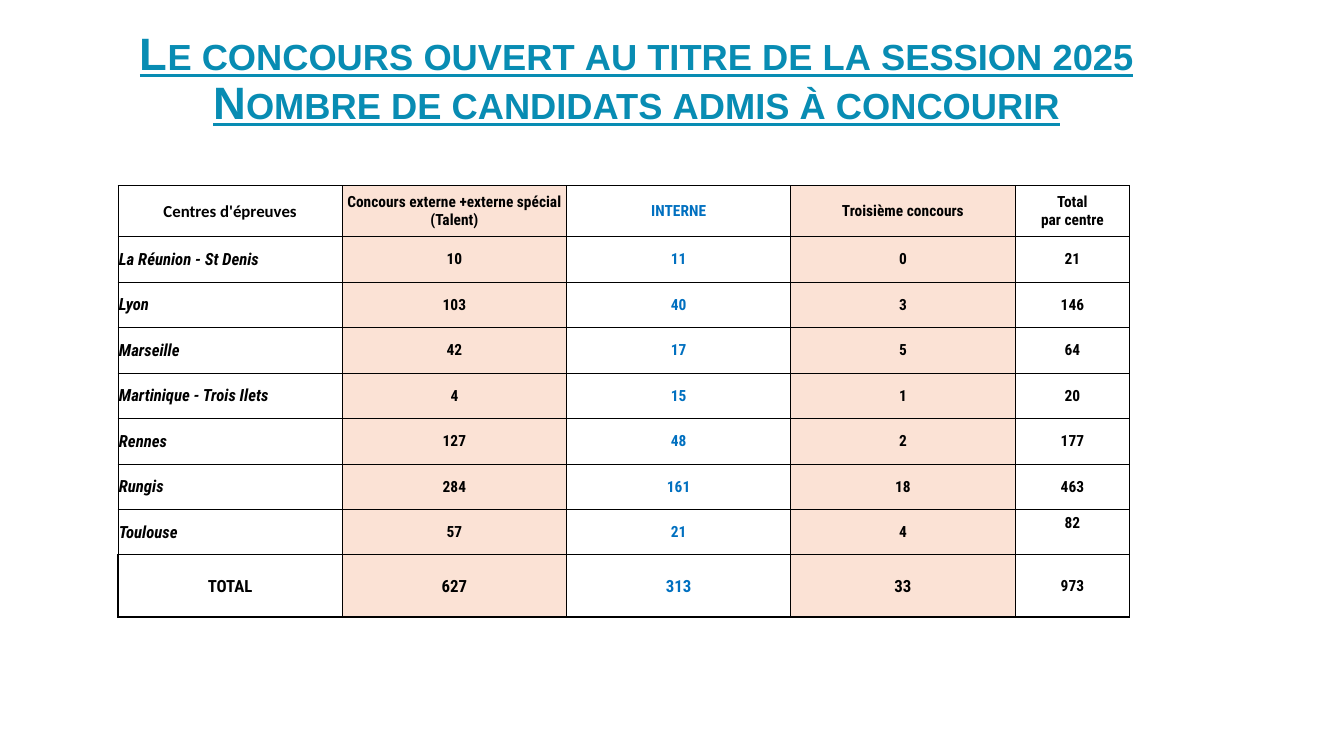
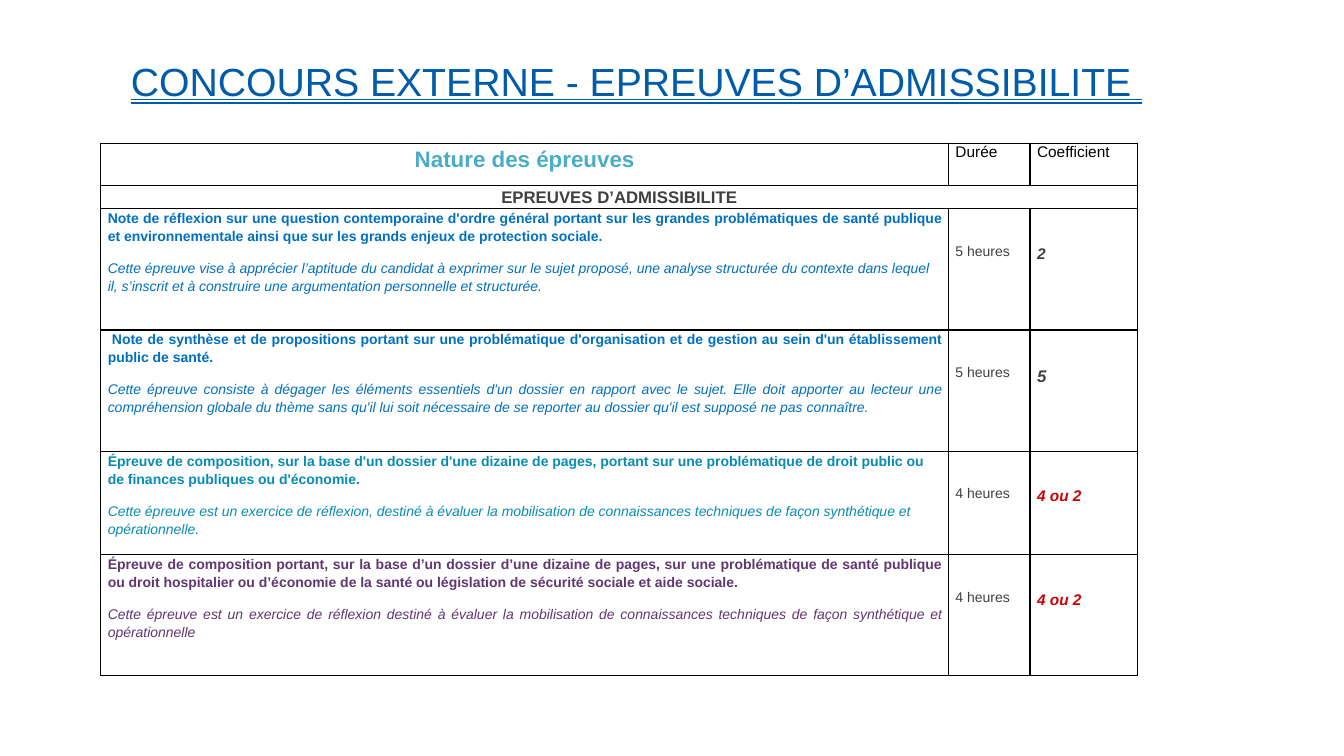
from lxml import etree
from pptx import Presentation
from pptx.dml.color import RGBColor
from pptx.enum.text import MSO_ANCHOR as Anchor, MSO_UNDERLINE as Underline, PP_ALIGN as Align
from pptx.oxml.ns import qn
from pptx.util import Pt

# Content
COLORS = {
    "black": "000000", "gray": "404040", "teal": "088CB3", "navy": "005CA9",
    "blue": "0070C0", "sky": "4BACC6", "purple": "613771", "red": "CC0000",
    "peach": "FBE2D5",
}
CANDIDATES_TITLE = ("Le concours ouvert au titre de la session 2025\n"
                    "Nombre de candidats admis à concourir")
CANDIDATES = [
    ("Centres d'épreuves", "Concours externe +externe spécial (Talent)", "INTERNE",
     "Troisième concours", "Total\npar centre"),
    ("La Réunion - St Denis", "10", "11", "0", "21"),
    ("Lyon", "103", "40", "3", "146"),
    ("Marseille", "42", "17", "5", "64"),
    ("Martinique - Trois Ilets", "4", "15", "1", "20"),
    ("Rennes", "127", "48", "2", "177"),
    ("Rungis", "284", "161", "18", "463"),
    ("Toulouse", "57", "21", "4", "82"),
    ("TOTAL", "627", "313", "33", "973"),
]
EXAMS_TITLE = "CONCOURS EXTERNE - EPREUVES D’ADMISSIBILITE "
EXAM_HEADERS = ("Nature des épreuves", "Durée", "Coefficient")
EXAM_SECTION = "EPREUVES D’ADMISSIBILITE"
EXAMS = [
    {"name": "Note de réflexion sur une question contemporaine d'ordre général portant sur "
             "les grandes problématiques de santé publique et environnementale ainsi que sur "
             "les grands enjeux de protection sociale.",
     "aim": "Cette épreuve vise à apprécier l’aptitude du candidat à exprimer sur le sujet "
            "proposé, une analyse structurée du contexte dans lequel il, s’inscrit et à "
            "construire une argumentation personnelle et structurée.",
     "color": "blue", "aligns": (Align.JUSTIFY, Align.LEFT), "indent": 0,
     "duration": "5 heures", "weight": "2", "weight_size": 11, "weight_color": "gray"},
    {"name": "Note de synthèse et de propositions portant sur une problématique "
             "d'organisation et de gestion au sein d'un établissement public de santé.",
     "aim": "Cette épreuve consiste à dégager les éléments essentiels d'un dossier en rapport "
            "avec le sujet. Elle doit apporter au lecteur une compréhension globale du thème "
            "sans qu'il lui soit nécessaire de se reporter au dossier qu'il est supposé ne "
            "pas connaître.",
     "color": "blue", "aligns": (Align.JUSTIFY, Align.JUSTIFY), "indent": 3,
     "duration": "5 heures", "weight": "5", "weight_size": 12, "weight_color": "gray"},
    {"name": "Épreuve de composition, sur la base d'un dossier d'une dizaine de pages, "
             "portant sur une problématique de droit public ou de finances publiques ou "
             "d'économie.",
     "aim": "Cette épreuve est un exercice de réflexion, destiné à évaluer la mobilisation de "
            "connaissances techniques de façon synthétique et opérationnelle.",
     "color": "teal", "aligns": (Align.LEFT, Align.LEFT), "indent": 0,
     "duration": "4 heures", "weight": "4 ou 2", "weight_size": 11, "weight_color": "red"},
    {"name": "Épreuve de composition portant, sur la base d’un dossier d’une dizaine de "
             "pages, sur une problématique de santé publique ou droit hospitalier ou "
             "d’économie de la santé ou législation de sécurité sociale et aide sociale.",
     "aim": "Cette épreuve est un exercice de réflexion destiné à évaluer la mobilisation de "
            "connaissances techniques de façon synthétique et opérationnelle",
     "color": "purple", "aligns": (Align.JUSTIFY, Align.JUSTIFY), "indent": 0,
     "duration": "4 heures", "weight": "4 ou 2", "weight_size": 11, "weight_color": "red"},
]

# Shared formats
SPACED = {"line_spacing": 1.15, "space_after": Pt(10)}
EXAM_MARGINS = (5, 0, 5, 0)
CENTER_MARGINS = (0.7, 0.7, 0.7, 0)


def write(para, text, color="black", size=11, layout=None, **font):
    para.text = text
    for key, value in (layout or {}).items():
        setattr(para, key, value)
    for span in para.runs:
        span.font.color.rgb = RGBColor.from_string(COLORS[color])
        for key, value in {"name": "Arial", "size": Pt(size), **font}.items():
            setattr(span.font, key, value)


def add_title(page, text, top, height, **style):
    box = page.shapes.add_textbox(Pt(40.3), Pt(top), Pt(828.7), Pt(height))
    frame = box.text_frame
    frame.word_wrap = True
    frame.vertical_anchor = Anchor.MIDDLE
    para = frame.paragraphs[0]
    write(para, text, layout={"alignment": Align.CENTER, "line_spacing": 0.9}, **style)
    return para


def add_grid(page, left, top, widths, heights):
    table = page.shapes.add_table(len(heights), len(widths), Pt(left), Pt(top),
                                  Pt(sum(widths)), Pt(sum(heights))).table
    table.first_row = table.horz_banding = False
    for column, width in zip(table.columns, widths):
        column.width = Pt(width)
    for row, height in zip(table.rows, heights):
        row.height = Pt(height)
    return table


def style_cell(cell, margins, borders, fill=None, anchor=Anchor.TOP):
    """Margins and borders follow the order left, top, right, bottom."""
    for side, margin in zip(("left", "top", "right", "bottom"), margins):
        setattr(cell, f"margin_{side}", Pt(margin))
    cell.vertical_anchor = anchor
    properties = cell._tc.get_or_add_tcPr()
    left, top, right, bottom = borders
    for tag, width in (("lnL", left), ("lnR", right), ("lnT", top), ("lnB", bottom)):
        line = etree.SubElement(properties, qn(f"a:{tag}"), w=str(Pt(width)))
        solid = etree.SubElement(line, qn("a:solidFill"))
        etree.SubElement(solid, qn("a:srgbClr"), val=COLORS["black"])
    if fill:
        cell.fill.solid()
        cell.fill.fore_color.rgb = RGBColor.from_string(COLORS[fill])
    else:
        cell.fill.background()


def candidates_slide(page):
    title = add_title(page, CANDIDATES_TITLE, 15.8, 83.5,
                      color="teal", size=32.4, bold=True, underline=True)
    for span in title.runs:
        span.font._element.set("cap", "small")

    last_row, last_column = len(CANDIDATES) - 1, len(CANDIDATES[0]) - 1
    table = add_grid(page, 84.3, 132.7, [160.2] * last_column + [82],
                     [36.2] + [32.5] * (last_row - 1) + [44.5])
    for r, values in enumerate(CANDIDATES):
        for c, text in enumerate(values):
            cell = table.cell(r, c)
            is_center = c == 0 and 0 < r < last_row
            in_total = c == last_column
            # Heavier rules frame the totals
            borders = (1 if r == last_row and c == 0 else 0.5,
                       1 if (r == last_row and not in_total) or (r == 0 and in_total) else 0.5,
                       1 if in_total else 0.5,
                       1 if r == last_row or (r == last_row - 1 and not in_total) else 0.5)
            style_cell(cell, CENTER_MARGINS, borders,
                       "peach" if c in (1, 3) else None, Anchor.MIDDLE)
            write(cell.text_frame.paragraphs[0], text,
                  color="blue" if c == 2 else "black",
                  size=12 if c == 0 or (r == last_row and not in_total) else 11,
                  layout={"alignment": Align.JUSTIFY if is_center else Align.CENTER},
                  name="Calibri" if r == c == 0 else "Roboto Condensed",
                  bold=True, italic=is_center)
    # The last centre's total sits above the middle of its cell
    table.cell(last_row - 1, last_column).margin_bottom = Pt(13)


def exams_slide(page):
    add_title(page, EXAMS_TITLE, 33.1, 53.3, color="navy", size=28,
              underline=Underline.DOUBLE_LINE)
    table = add_grid(page, 72, 102.3, [605.5, 58.3, 77],
                     [30.2, 16.2, 86.6, 86.6, 73.9, 86.6])
    for cell in table.iter_cells():
        style_cell(cell, EXAM_MARGINS, (1, 1, 1, 1))

    # Heading rows
    centered = {"alignment": Align.CENTER, **SPACED}
    heading_styles = [{"color": "sky", "size": 16, "bold": True, "layout": centered}, {}, {}]
    for c, (text, style) in enumerate(zip(EXAM_HEADERS, heading_styles)):
        write(table.cell(0, c).text_frame.paragraphs[0], text, **style)
    section = table.cell(1, 0)
    section.merge(table.cell(1, 2))
    write(section.text_frame.paragraphs[0], EXAM_SECTION, color="gray", size=12,
          bold=True, layout=centered)

    # One row per exam
    for r, exam in enumerate(EXAMS, start=2):
        nature, duration, weight = (table.cell(r, c) for c in range(3))
        frame = nature.text_frame
        name, aim = frame.paragraphs[0], frame.add_paragraph()
        name_align, aim_align = exam["aligns"]
        write(name, exam["name"], exam["color"], 10,
              {"alignment": name_align, **SPACED}, bold=True)
        write(aim, exam["aim"], exam["color"], 10,
              {"alignment": aim_align, **SPACED}, italic=True)
        if exam["indent"]:
            name._p.get_or_add_pPr().set("indent", str(Pt(exam["indent"])))

        duration.margin_top, weight.margin_top = Pt(23.2), Pt(24.5)
        write(duration.text_frame.paragraphs[0], exam["duration"], "gray", 10, SPACED)
        write(weight.text_frame.paragraphs[0], exam["weight"], exam["weight_color"],
              exam["weight_size"], SPACED, bold=True, italic=True)


def main():
    deck = Presentation()
    deck.slide_width, deck.slide_height = Pt(960), Pt(540)
    for build in (candidates_slide, exams_slide):
        build(deck.slides.add_slide(deck.slide_layouts[6]))
    deck.save("out.pptx")


if __name__ == "__main__":
    main()
